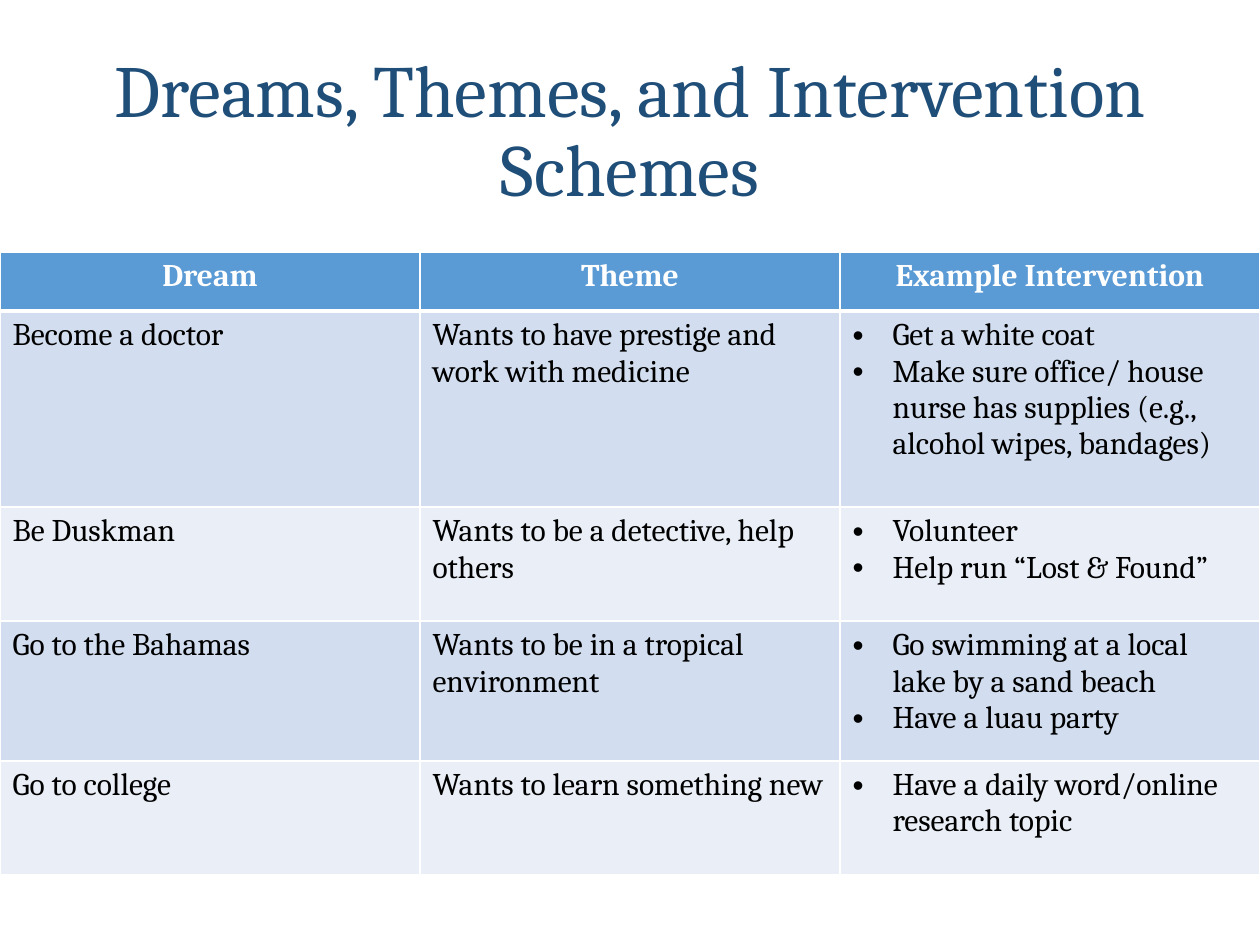
from dataclasses import dataclass

from lxml.etree import SubElement
from pptx import Presentation
from pptx.dml.color import RGBColor
from pptx.enum.text import MSO_ANCHOR, MSO_AUTO_SIZE, PP_ALIGN
from pptx.oxml.ns import qn
from pptx.table import Table, _Cell
from pptx.text.text import TextFrame
from pptx.util import Pt

EMU_PER_PX = 914400 / 126


@dataclass(frozen=True)
class Theme:
    font: str = "Cambria"
    title_size: int = 42
    table_size: int = 18
    title: str = "1F4E79"
    header: str = "5B9BD5"
    bands: tuple[str, str] = ("D2DEEF", "EAEFF7")
    white: str = "FFFFFF"
    black: str = "000000"


@dataclass(frozen=True)
class DreamRow:
    dream: str
    theme: str
    interventions: tuple[str, ...]
    height: int


THEME = Theme()
HEADINGS = ("Dream", "Theme", "Example Intervention")
HEADER_HEIGHT = 59
COLUMN_WIDTH = 420
BULLET_INDENT = 40
ROWS = (
    DreamRow(
        "Become a doctor",
        "Wants to have prestige and work with medicine",
        (
            "Get a white coat",
            "Make sure office/ house nurse has supplies (e.g., alcohol wipes, bandages)",
        ),
        196,
    ),
    DreamRow(
        "Be Duskman",
        "Wants to be a detective, help others",
        ("Volunteer", "Help run “Lost & Found”"),
        114,
    ),
    DreamRow(
        "Go to the Bahamas",
        "Wants to be in a tropical environment",
        ("Go swimming at a local lake by a sand beach", "Have a luau party"),
        140,
    ),
    DreamRow(
        "Go to college",
        "Wants to learn something new",
        ("Have a daily word/online research topic",),
        114,
    ),
)


def px(length: int) -> int:
    return round(length * EMU_PER_PX)


def write(
    frame: TextFrame,
    *lines: str,
    size: int = THEME.table_size,
    color: str = THEME.black,
    bold: bool = False,
    align: PP_ALIGN = PP_ALIGN.LEFT,
    line_spacing: float = 1.0,
    bullet: bool = False,
) -> None:
    """Fill a frame with one paragraph per line, all in the same format."""
    for index, line in enumerate(lines):
        para = frame.add_paragraph() if index else frame.paragraphs[0]
        para.alignment = align
        para.line_spacing = line_spacing
        para.space_before = Pt(0)
        if bullet:
            properties = para._p.get_or_add_pPr()
            properties.set("marL", str(px(BULLET_INDENT)))
            properties.set("indent", str(-px(BULLET_INDENT)))
            SubElement(properties, qn("a:buFont"), typeface="Arial")
            SubElement(properties, qn("a:buChar"), char="•")
        span = para.add_run()
        span.text = line
        span.font.name = THEME.font
        span.font.size = Pt(size)
        span.font.bold = bold
        span.font.color.rgb = RGBColor.from_string(color)


def style_cell(cell: _Cell, fill: str, top: int = 1, bottom: int = 1) -> None:
    """Set the fill and white borders, with top and bottom widths in points."""
    properties = cell._tc.get_or_add_tcPr()
    for side, width in (("L", 1), ("R", 1), ("T", top), ("B", bottom)):
        line = SubElement(properties, qn(f"a:ln{side}"), w=str(Pt(width)))
        solid = SubElement(line, qn("a:solidFill"))
        SubElement(solid, qn("a:srgbClr"), val=THEME.white)
    cell.fill.solid()
    cell.fill.fore_color.rgb = RGBColor.from_string(fill)


def fill_header(table: Table) -> None:
    table.rows[0].height = px(HEADER_HEIGHT)
    for cell, heading in zip(table.rows[0].cells, HEADINGS):
        style_cell(cell, THEME.header, bottom=3)
        write(cell.text_frame, heading, color=THEME.white, bold=True, align=PP_ALIGN.CENTER)


def fill_row(table: Table, number: int, row: DreamRow) -> None:
    table.rows[number].height = px(row.height)
    dream, theme, interventions = table.rows[number].cells
    for cell in (dream, theme, interventions):
        style_cell(cell, THEME.bands[(number - 1) % 2], top=3 if number == 1 else 1)
    write(dream.text_frame, row.dream)
    write(theme.text_frame, row.theme)
    write(interventions.text_frame, *row.interventions, bullet=True)


def main() -> None:
    deck = Presentation()
    deck.slide_width, deck.slide_height = px(1260), px(945)
    page = deck.slides.add_slide(deck.slide_layouts[5])

    title = page.shapes.title
    title.left, title.top, title.width, title.height = px(87), px(42), px(1086), px(183)
    title.text_frame.auto_size = MSO_AUTO_SIZE.NONE
    title.text_frame.vertical_anchor = MSO_ANCHOR.MIDDLE
    write(
        title.text_frame,
        "Dreams, Themes, and Intervention Schemes",
        size=THEME.title_size,
        color=THEME.title,
        align=PP_ALIGN.CENTER,
        line_spacing=0.9,
    )

    height = HEADER_HEIGHT + sum(row.height for row in ROWS)
    width = COLUMN_WIDTH * len(HEADINGS)
    table = page.shapes.add_table(
        len(ROWS) + 1, len(HEADINGS), 0, px(252), px(width), px(height)
    ).table
    for column in table.columns:
        column.width = px(COLUMN_WIDTH)
    fill_header(table)
    for number, row in enumerate(ROWS, start=1):
        fill_row(table, number, row)

    deck.save("out.pptx")


if __name__ == "__main__":
    main()
